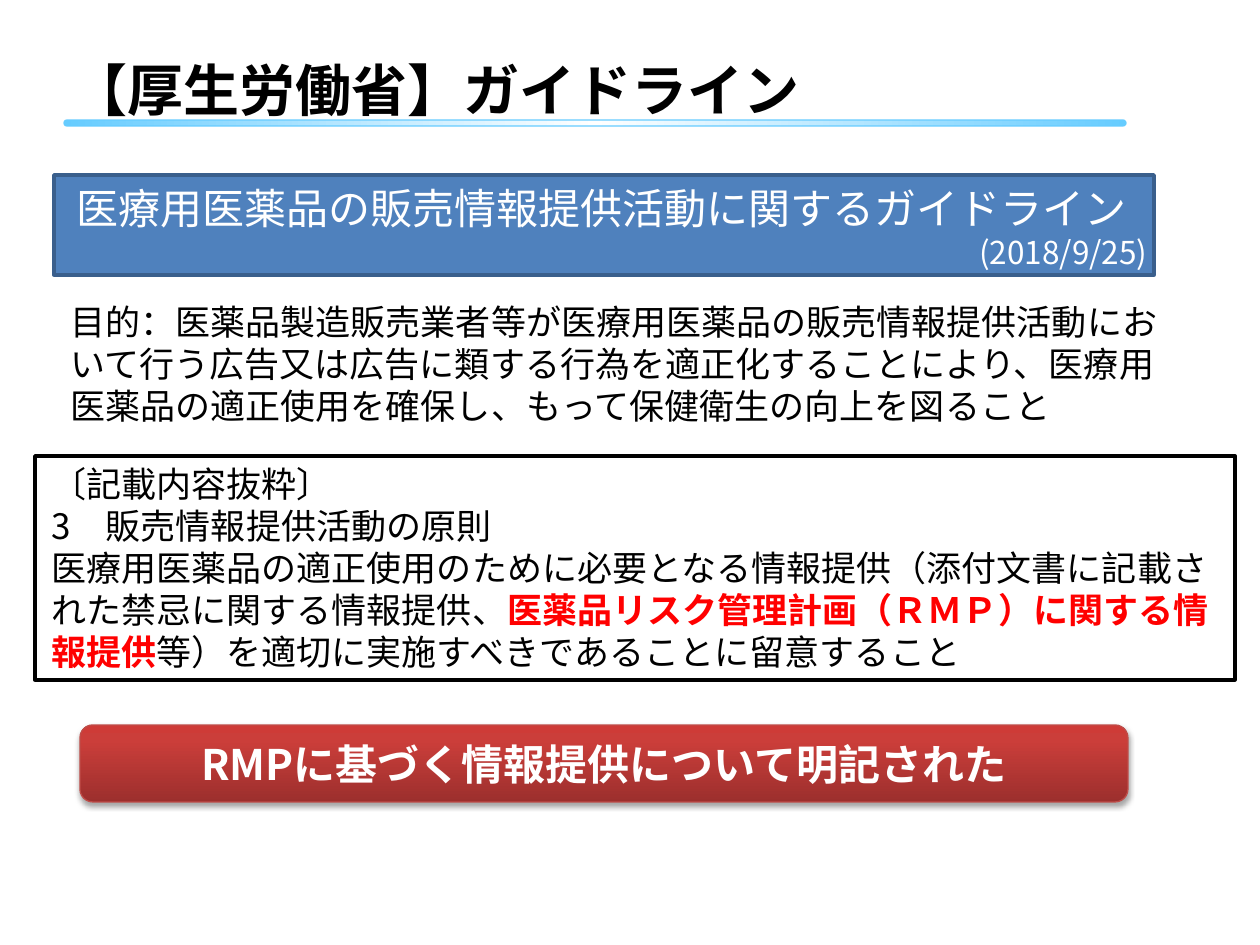
import collections
import dataclasses

import lxml.etree
import pptx
import pptx.dml.color
import pptx.enum.shapes
import pptx.enum.text
import pptx.oxml.ns
import pptx.util

EMU_PER_PX = 914400 / 126
LINE_PITCH = 1.2
SHAPES = pptx.enum.shapes.MSO_SHAPE
ALIGN = pptx.enum.text.PP_ALIGN
Box = collections.namedtuple("Box", "left top width height")
Run = collections.namedtuple("Run", "text color bold", defaults=(False,))


@dataclasses.dataclass(frozen=True)
class Theme:
    """Colours, font and type sizes of the slide."""
    font: str = "Noto Sans CJK JP"
    black: str = "000000"
    white: str = "FFFFFF"
    red: str = "FF0000"
    sky: str = "66CCFF"
    blue: str = "4F81BD"
    navy: str = "3A5F8C"
    crimson_edge: str = "BF4C48"
    crimson: tuple = ((0, "9C2F2D"), (80, "CB3E3A"), (100, "CE3B37"))
    title: int = 32
    heading: int = 24
    body: int = 20
    date: int = 18


THEME = Theme()


def px(length):
    """Turn px into EMU."""
    return pptx.util.Emu(round(length * EMU_PER_PX))


def rgb(color):
    """Turn a hex string into a colour."""
    return pptx.dml.color.RGBColor.from_string(color)


def add_element(parent, tag, **attributes):
    """Append a drawing element with the given attributes."""
    element = lxml.etree.SubElement(parent, pptx.oxml.ns.qn(tag))
    for name, value in attributes.items():
        element.set(name, str(value))
    return element


def add_panel(page, kind, box, line_color, line_width, fill_color=None):
    """Add a shape without shadow, either filled or hollow."""
    panel = page.shapes.add_shape(kind, *map(px, box))
    panel.shadow.inherit = False
    panel.line.color.rgb = rgb(line_color)
    panel.line.width = pptx.util.Pt(line_width)
    if fill_color:
        panel.fill.solid()
        panel.fill.fore_color.rgb = rgb(fill_color)
    else:
        panel.fill.background()
    return panel


def set_gradient(panel, stops, angle):
    """Fill a shape with a linear gradient."""
    panel.fill.gradient()
    panel.fill.gradient_angle = angle
    stop_list = panel.element.spPr.find(".//" + pptx.oxml.ns.qn("a:gsLst"))
    for stop in list(stop_list):
        stop_list.remove(stop)
    for percent, color in stops:
        stop = add_element(stop_list, "a:gs", pos=percent * 1000)
        add_element(stop, "a:srgbClr", val=color)


def set_shadow(panel, color, alpha, blur, distance):
    """Give a shape a soft shadow that falls downwards."""
    effects = panel.element.spPr.find(pptx.oxml.ns.qn("a:effectLst"))
    shadow = add_element(effects, "a:outerShdw", blurRad=pptx.util.Pt(blur),
                         dist=pptx.util.Pt(distance), dir=90 * 60000, rotWithShape=0)
    tint = add_element(shadow, "a:srgbClr", val=color)
    add_element(tint, "a:alpha", val=alpha * 1000)


def write_paragraph(para, runs, size, align=ALIGN.LEFT):
    """Write styled runs into a paragraph."""
    para.alignment = align
    para.line_spacing = pptx.util.Pt(size * LINE_PITCH)
    for run in runs:
        span = para.add_run()
        span.text = run.text
        span.font.size = pptx.util.Pt(size)
        span.font.bold = run.bold
        span.font.name = THEME.font
        span.font.color.rgb = rgb(run.color)
        add_element(span.font._element, "a:ea", typeface=THEME.font)


def add_text(page, box):
    """Add a wrapping text box and return its frame."""
    frame = page.shapes.add_textbox(*map(px, box)).text_frame
    frame.word_wrap = True
    return frame


def add_title(page, box):
    """Place the slide title with its gradient rule."""
    rule_box = Box(box.left + 5, box.top + 71, 1062, 6)
    rule = add_panel(page, SHAPES.ROUNDED_RECTANGLE, rule_box, THEME.sky, 0.75, THEME.sky)
    rule.adjustments[0] = 0.5
    set_gradient(rule, ((0, THEME.sky), (50, THEME.white), (100, THEME.sky)), 0)
    frame = add_text(page, box)
    write_paragraph(frame.paragraphs[0], [Run("【厚生労働省】ガイドライン", THEME.black, True)],
                    THEME.title)


def add_banner(page, box):
    """Place the blue banner with the guideline name and date."""
    add_panel(page, SHAPES.RECTANGLE, box, THEME.navy, 2, THEME.blue)
    frame = add_text(page, Box(box.left + 10, box.top + 1, box.width - 4, box.height + 2))
    write_paragraph(frame.paragraphs[0],
                    [Run("医療用医薬品の販売情報提供活動に関するガイドライン", THEME.white)], THEME.heading)
    write_paragraph(frame.add_paragraph(), [Run("(2018/9/25)", THEME.white)],
                    THEME.date, ALIGN.RIGHT)


def add_purpose(page, box):
    """Place the statement of purpose."""
    purpose = ("目的：医薬品製造販売業者等が医療用医薬品の販売情報提供活動において行う広告又は"
               "広告に類する行為を適正化することにより、医療用医薬品の適正使用を確保し、"
               "もって保健衛生の向上を図ること")
    write_paragraph(add_text(page, box).paragraphs[0], [Run(purpose, THEME.black)], THEME.body)


def add_excerpt(page, box):
    """Place the framed excerpt with its highlighted passage."""
    frame = add_text(page, Box(box.left + 4, box.top, box.width - 16, box.height))
    excerpt = (
        [Run("〔記載内容抜粋〕", THEME.black)],
        [Run("3　販売情報提供活動の原則", THEME.black)],
        [Run("医療用医薬品の適正使用のために必要となる情報提供（添付文書に記載された"
             "禁忌に関する情報提供、", THEME.black),
         Run("医薬品リスク管理計画（ＲＭＰ）に関する情報提供", THEME.red, True),
         Run("等）を適切に実施すべきであることに留意すること", THEME.black)],
    )
    for index, runs in enumerate(excerpt):
        para = frame.add_paragraph() if index else frame.paragraphs[0]
        write_paragraph(para, runs, THEME.body)
    add_panel(page, SHAPES.RECTANGLE, box, THEME.black, 2)


def add_conclusion(page, box):
    """Place the red conclusion bar."""
    bar = add_panel(page, SHAPES.ROUNDED_RECTANGLE, box, THEME.crimson_edge, 0.75, THEME.red)
    set_gradient(bar, THEME.crimson, 90)
    set_shadow(bar, THEME.black, 35, 3.1, 1.8)
    bar.text_frame.vertical_anchor = pptx.enum.text.MSO_ANCHOR.MIDDLE
    write_paragraph(bar.text_frame.paragraphs[0],
                    [Run("RMPに基づく情報提供について明記された", THEME.white, True)],
                    THEME.heading, ALIGN.CENTER)


def main():
    """Build the slide and save it."""
    deck = pptx.Presentation()
    deck.slide_width, deck.slide_height = px(1260), px(945)
    page = deck.slides.add_slide(deck.slide_layouts[6])
    add_title(page, Box(59, 49, 1091, 81))
    add_banner(page, Box(54, 175, 1100, 100))
    add_purpose(page, Box(58, 294, 1115, 140))
    add_excerpt(page, Box(35, 456, 1200, 224))
    add_conclusion(page, Box(80, 725, 1048, 77))
    deck.save("out.pptx")


if __name__ == "__main__":
    main()
